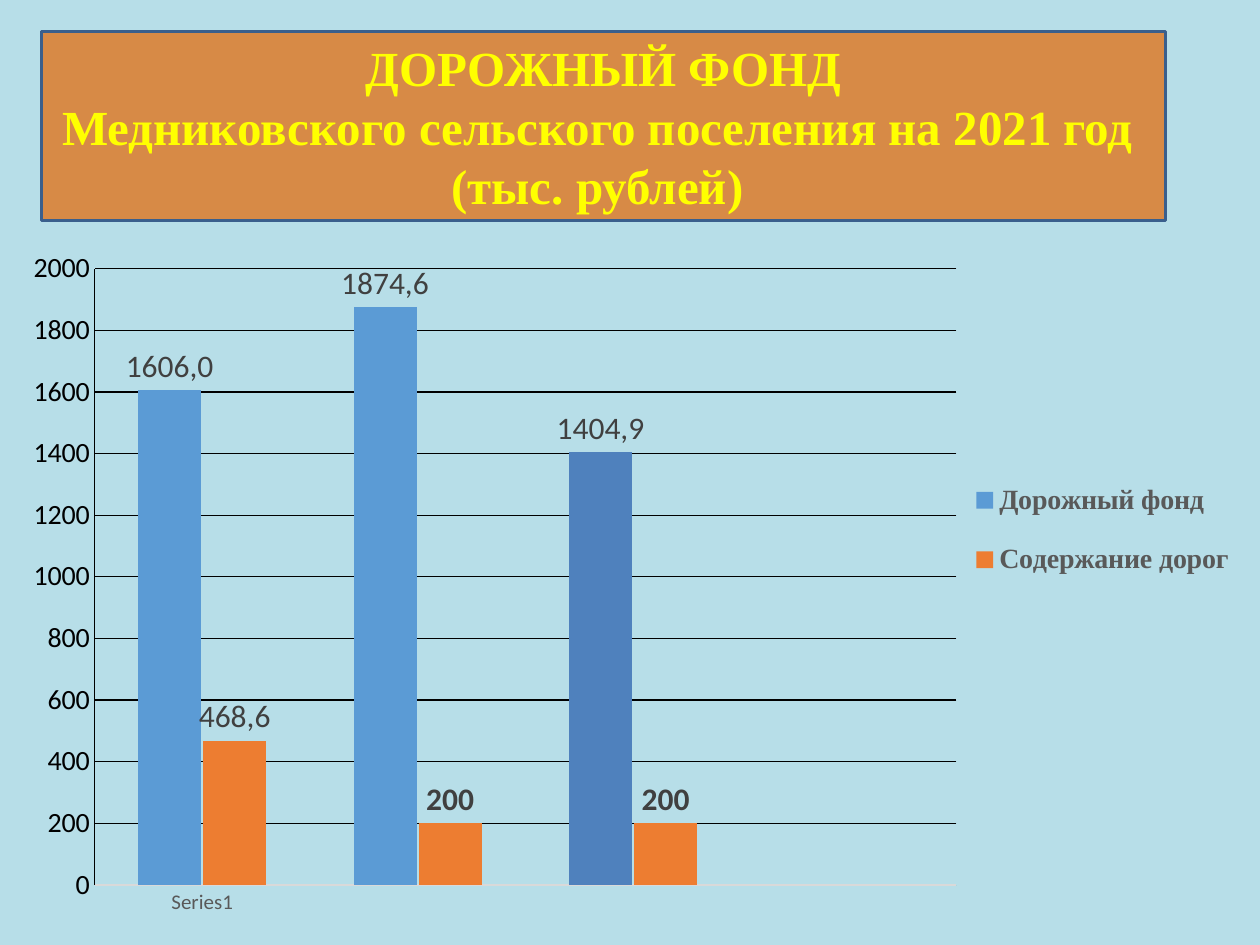
from lxml import etree
from pptx import Presentation
from pptx import util as u
from pptx.chart.data import CategoryChartData
from pptx.dml.color import RGBColor
from pptx.enum import chart as charts, shapes, text
from pptx.oxml import parse_xml
from pptx.oxml.ns import nsdecls, qn

BACKGROUND = RGBColor(0xB7, 0xDE, 0xE8)
BANNER_FILL = RGBColor(0xE4, 0x6C, 0x0A)
BANNER_LINE = RGBColor(0x3A, 0x5F, 0x8C)
YELLOW = RGBColor(0xFF, 0xFF, 0x00)
BLACK = RGBColor(0, 0, 0)
GREY = RGBColor(0x59, 0x59, 0x59)
DARK_GREY = RGBColor(0x40, 0x40, 0x40)
PALE_GREY = RGBColor(0xD9, 0xD9, 0xD9)
BLUE = RGBColor(0x5B, 0x9B, 0xD5)
DEEP_BLUE = RGBColor(0x4F, 0x81, 0xBD)
ORANGE = RGBColor(0xED, 0x7D, 0x31)


def set_font(font, name, size, color, bold=False):
    for key, value in {"name": name, "size": u.Pt(size), "bold": bold}.items():
        setattr(font, key, value)
    font.color.rgb = color


def set_layout(element, index, box, inner=False):
    """Place a chart part by hand; box holds x, y, w, h as shares of the chart."""
    for old in element.findall(qn("c:layout")):
        element.remove(old)
    target = '<c:layoutTarget val="inner"/>' if inner else ""
    modes = '<c:xMode val="edge"/><c:yMode val="edge"/>'
    sizes = "".join(f'<c:{key} val="{value}"/>' for key, value in zip("xywh", box))
    element.insert(index, parse_xml(
        f'<c:layout {nsdecls("c")}><c:manualLayout>{target}{modes}{sizes}'
        "</c:manualLayout></c:layout>"))


presentation = Presentation()
presentation.slide_width, presentation.slide_height = u.Inches(10), u.Inches(7.5)
width, height = presentation.slide_width, presentation.slide_height
slide = presentation.slides.add_slide(presentation.slide_layouts[6])
slide.background.fill.solid()
slide.background.fill.fore_color.rgb = BACKGROUND

# Chart
series_formats = [
    ("Дорожный фонд", (1606, 1874.6, 1404.9, None), BLUE, ["1606,0", "1874,6", "1404,9"]),
    ("Содержание дорог", (468.6, 200, 200, None), ORANGE, ["468,6"]),
]
chart_data = CategoryChartData()
chart_data.categories = ["Series1", "", "", ""]
for name, values, _, _ in series_formats:
    chart_data.add_series(name, values)
chart = slide.shapes.add_chart(
    charts.XL_CHART_TYPE.COLUMN_CLUSTERED,
    0, int(height * 0.256), width, int(height * 0.712), chart_data).chart
set_font(chart.font, "Calibri", 10, BLACK)
chart.has_title = False
plot = chart.plots[0]
for key, value in {"gap_width": 138, "overlap": -3, "vary_by_categories": False}.items():
    setattr(plot, key, value)

for series, (_, _, color, captions) in zip(plot.series, series_formats):
    series.format.fill.solid()
    series.format.fill.fore_color.rgb = color
    labels = series.data_labels
    labels.show_value = True
    labels.position = charts.XL_LABEL_POSITION.OUTSIDE_END
    set_font(labels.font, "Calibri", 18, DARK_GREY, True)
    for index, caption in enumerate(captions):
        label = series.points[index].data_label
        run = label.text_frame.paragraphs[0].add_run()
        run.text = caption
        set_font(run.font, "Calibri", 18, DARK_GREY)
        label.position = charts.XL_LABEL_POSITION.OUTSIDE_END
third_bar = plot.series[0].points[2].format.fill
third_bar.solid()
third_bar.fore_color.rgb = DEEP_BLUE

value_axis = chart.value_axis
for key, value in {"minimum_scale": 0, "maximum_scale": 2000, "major_unit": 200}.items():
    setattr(value_axis, key, value)
for axis, size, color, line_color in [
        (chart.category_axis, 12, GREY, PALE_GREY), (value_axis, 16, BLACK, BLACK)]:
    axis.major_tick_mark = axis.minor_tick_mark = charts.XL_TICK_MARK.NONE
    set_font(axis.tick_labels.font, "Calibri", size, color)
    axis.format.line.color.rgb = line_color
    axis.format.line.width = u.Pt(0.75)
gridline = value_axis.major_gridlines.format.line
gridline.color.rgb = BLACK
gridline.width = u.Pt(0.75)

chart.has_legend = True
legend = chart.legend
legend.position = charts.XL_LEGEND_POSITION.RIGHT
legend.include_in_layout = False
set_font(legend.font, "Times New Roman", 16, GREY, True)
plot_area = chart.element.find(".//" + qn("c:plotArea"))
legend_element = chart.element.find(".//" + qn("c:legend"))
set_layout(plot_area, 0, (0.075, 0.04, 0.684, 0.92), inner=True)
set_layout(legend_element, 1, (0.765, 0.32, 0.22, 0.22))

# Title banner
banner = slide.shapes.add_shape(
    shapes.MSO_SHAPE.RECTANGLE,
    int(width * 0.033), int(height / 30), int(width * 0.892), int(height * 0.2))
banner.shadow.inherit = False
banner.fill.solid()
banner.fill.fore_color.rgb = BANNER_FILL
fill_color = banner.element.spPr.find(qn("a:solidFill"))[0]
etree.SubElement(fill_color, qn("a:alpha"), val="73000")
banner.line.color.rgb = BANNER_LINE
banner.line.width = u.Pt(2)
frame = banner.text_frame
frame.word_wrap = True
frame.vertical_anchor = text.MSO_ANCHOR.MIDDLE
frame.text = "ДОРОЖНЫЙ ФОНД\nМедниковского сельского поселения на 2021 год \n(тыс. рублей) "
for paragraph in frame.paragraphs:
    paragraph.alignment = text.PP_ALIGN.CENTER
    set_font(paragraph.runs[0].font, "Times New Roman", 28, YELLOW, True)

presentation.save("out.pptx")
